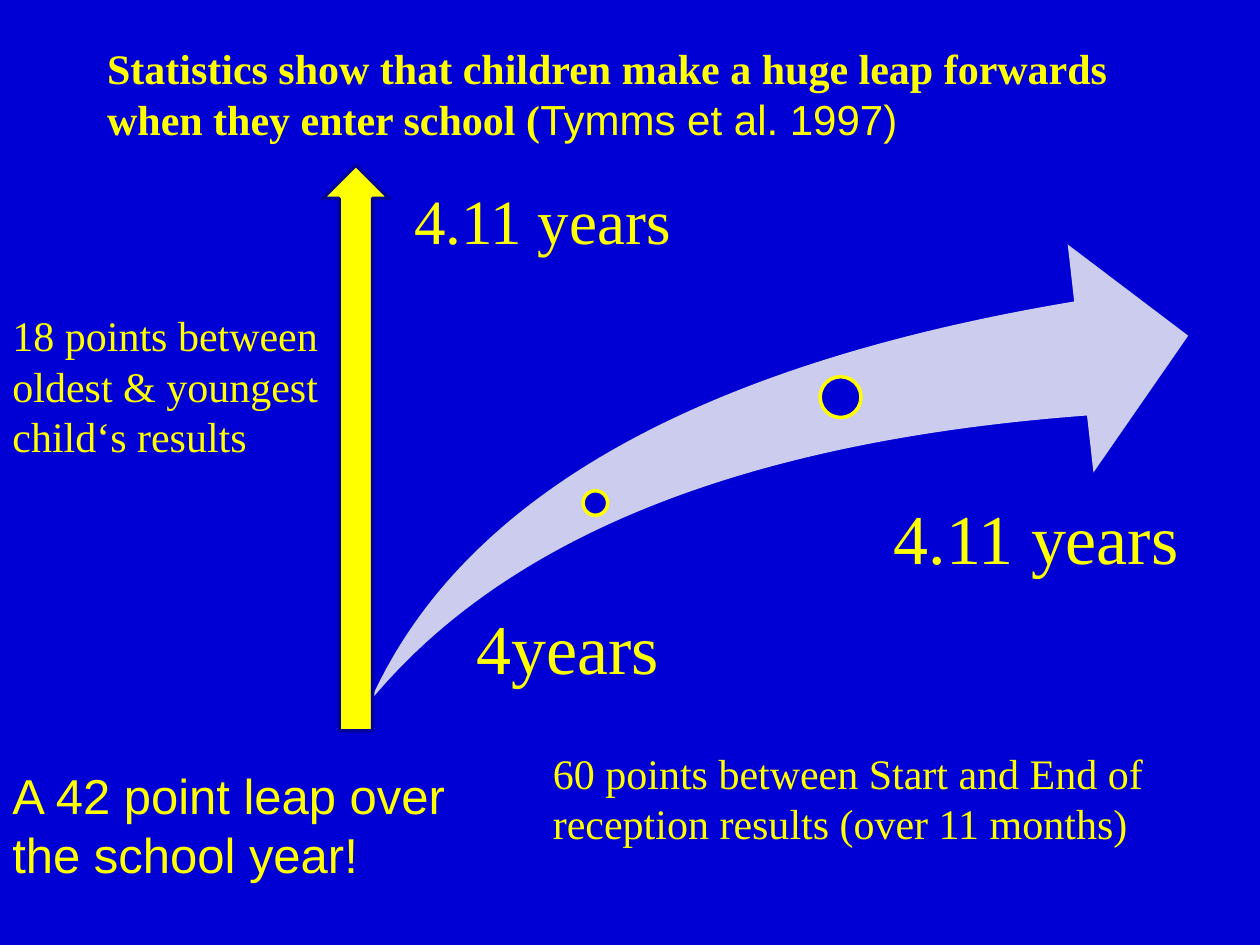
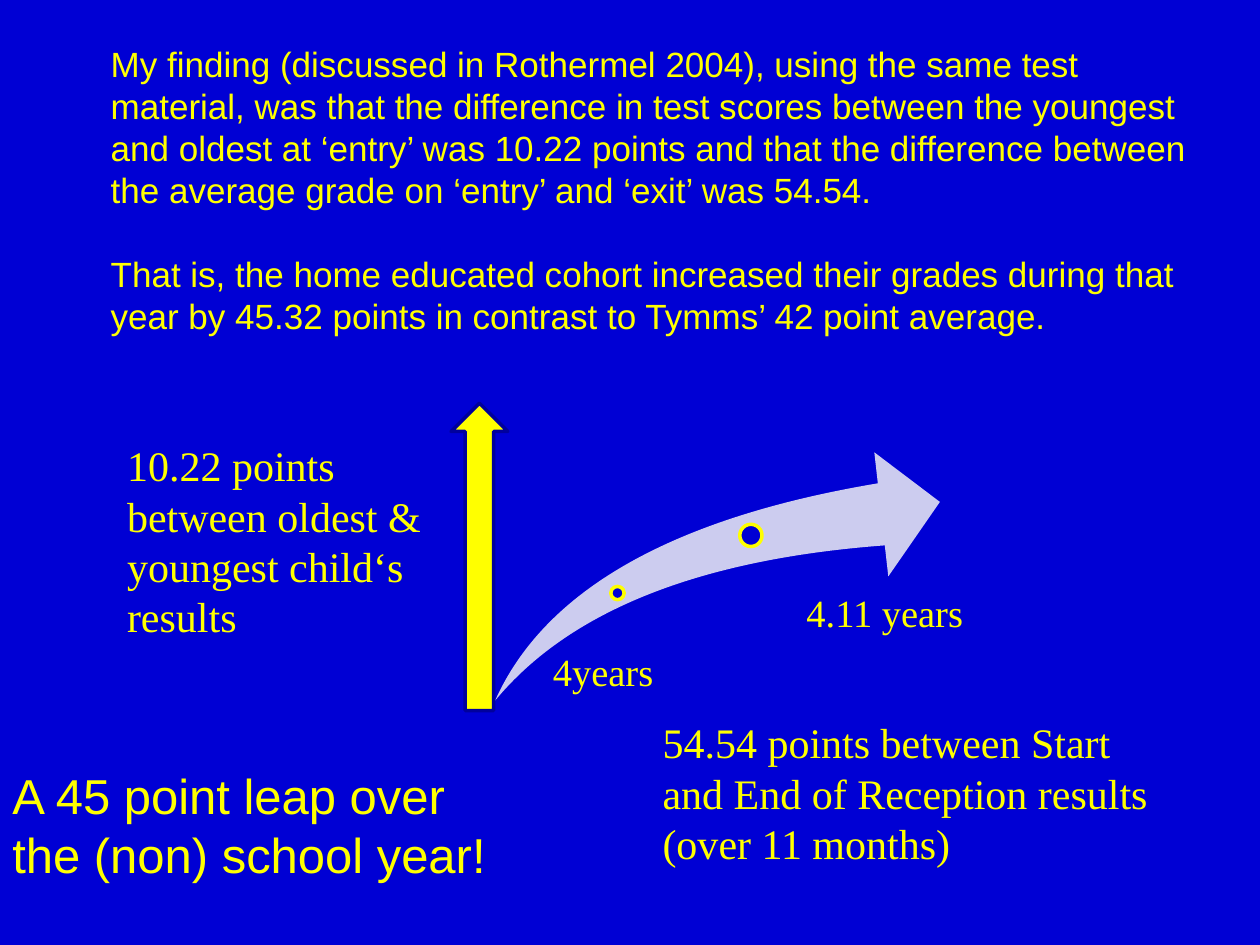
from pptx import Presentation
from pptx.dml.color import RGBColor as Rgb
from pptx.enum.shapes import MSO_SHAPE as Shape
from pptx.enum.text import MSO_ANCHOR as Anchor, MSO_AUTO_SIZE as Fit, PP_ALIGN as Align
from pptx.util import Inches, Pt

INK = {"back": "0000D4", "text": "FFFF00", "swoosh": "CCCCEF", "edge": "00009D"}
SERIF, SANS = "Times New Roman", "Arial"
TITLE, BLANK = 5, 6
DOTS = [(0.26, 0.54, 0.03), (0.55, 0.29, 0.05)]


def tint(name):
    return Rgb.from_string(INK[name])


def write(host, paras, box, size=24, font=SERIF, bold=False, pad=(0.1, 0.05),
          lines=None, after=0, indent=0):
    host.left, host.top, host.width, host.height = map(Inches, box)
    frame = host.text_frame
    frame.word_wrap = True
    frame.auto_size = Fit.NONE
    frame.vertical_anchor = Anchor.TOP
    frame.margin_left = frame.margin_right = Inches(pad[0])
    frame.margin_top = frame.margin_bottom = Inches(pad[1])
    for i, runs in enumerate(paras):
        para = frame.add_paragraph() if i else frame.paragraphs[0]
        para.alignment = Align.LEFT
        para.line_spacing = lines
        para.space_after = Pt(after if i < len(paras) - 1 else 0)
        if indent:
            props = para._p.get_or_add_pPr()
            props.set("marL", str(Inches(indent)))
            props.set("indent", "0")
        for words, face, heavy in ([(runs, font, bold)] if isinstance(runs, str) else runs):
            run = para.add_run()
            run.text = words
            run.font.name, run.font.size, run.font.bold = face, Pt(size), heavy
            run.font.color.rgb = tint("text")


def note(slide, paras, box, **style):
    write(slide.shapes.add_textbox(0, 0, 0, 0), paras, box, **style)


def draw(slide, kind, box, fill, line=None):
    shape = slide.shapes.add_shape(kind, *map(Inches, box))
    shape.shadow.inherit = False
    shape.fill.solid()
    shape.fill.fore_color.rgb = tint(fill)
    if line:
        shape.line.color.rgb = tint(line)
        shape.line.width = Pt(2)
    else:
        shape.line.fill.background()
    return shape


def growth(slide, box, size, end):
    left, top, wide, high = box
    swoosh = draw(slide, Shape.SWOOSH_ARROW, box, "swoosh")
    swoosh.adjustments[0] = swoosh.adjustments[1] = 0.25
    for x, y, part in DOTS:
        side = part * wide
        draw(slide, Shape.OVAL, (left + x * wide, top + y * high, side, side), "back", "text")
    for words, x, y in [("4years", 0.13, 0.81), ("4.11 years", end, 0.57)]:
        note(slide, [words], (left + x * wide, top + y * high, 0.4 * wide, 0.2 * high),
             size=size, pad=(0, 0), lines=0.9)


def rise(slide, box):
    draw(slide, Shape.UP_ARROW, box, "text", "edge")


def leap(slide, words, wide):
    note(slide, [words], (0, 6.03, wide, 1.04), size=28, font=SANS)


def start(deck, layout):
    slide = deck.slides.add_slide(deck.slide_layouts[layout])
    slide.background.fill.solid()
    slide.background.fill.fore_color.rgb = tint("back")
    return slide


def school(deck):
    slide = start(deck, TITLE)
    write(slide.shapes.title, [[
        ("Statistics show that children make a huge leap forwards when they enter school (",
         SERIF, True),
        ("Tymms et al. 1997)", SANS, False)]], (0.75, 0.29, 8.27, 0.91))
    growth(slide, (2.94, 1.94, 6.49, 3.62), 40, 0.64)
    rise(slide, (2.56, 1.31, 0.53, 4.49))
    note(slide, ["18 points between oldest & youngest child‘s results"], (0, 2.41, 3.19, 1.31))
    note(slide, ["60 points between Start and End of reception results (over 11 months)"],
         (4.29, 5.88, 5, 0.91))
    note(slide, ["4.11 years"], (3.19, 1.39, 2.36, 0.71), size=36)
    leap(slide, "A 42 point leap over the school year!", 3.74)


def home(deck):
    slide = start(deck, BLANK)
    note(slide, [
        "My finding (discussed in Rothermel 2004), using the same test material, was that "
        "the difference in test scores between the youngest and oldest at ‘entry’ was 10.22 "
        "points and that the difference between the average grade on ‘entry’ and ‘exit’ was 54.54.",
        "That is, the home educated cohort increased their grades during that year by 45.32 "
        "points in contrast to Tymms’ 42 point average."],
        (0.28, 0.29, 9.29, 2.46), size=20, font=SANS, after=24, indent=0.5)
    growth(slide, (3.93, 3.59, 3.53, 1.97), 22, 0.7)
    rise(slide, (3.58, 3.2, 0.45, 2.44))
    note(slide, ["10.22 points between oldest & youngest child‘s results"],
         (0.91, 3.44, 2.68, 1.72))
    note(slide, ["54.54 points between Start and End of Reception results", "(over 11 months)"],
         (5.16, 5.64, 4.21, 1.31))
    leap(slide, "A 45 point leap over the (non) school year!", 4.06)


def main():
    deck = Presentation()
    deck.slide_width, deck.slide_height = Inches(10), Inches(7.5)
    school(deck)
    home(deck)
    deck.save("out.pptx")


if __name__ == "__main__":
    main()
